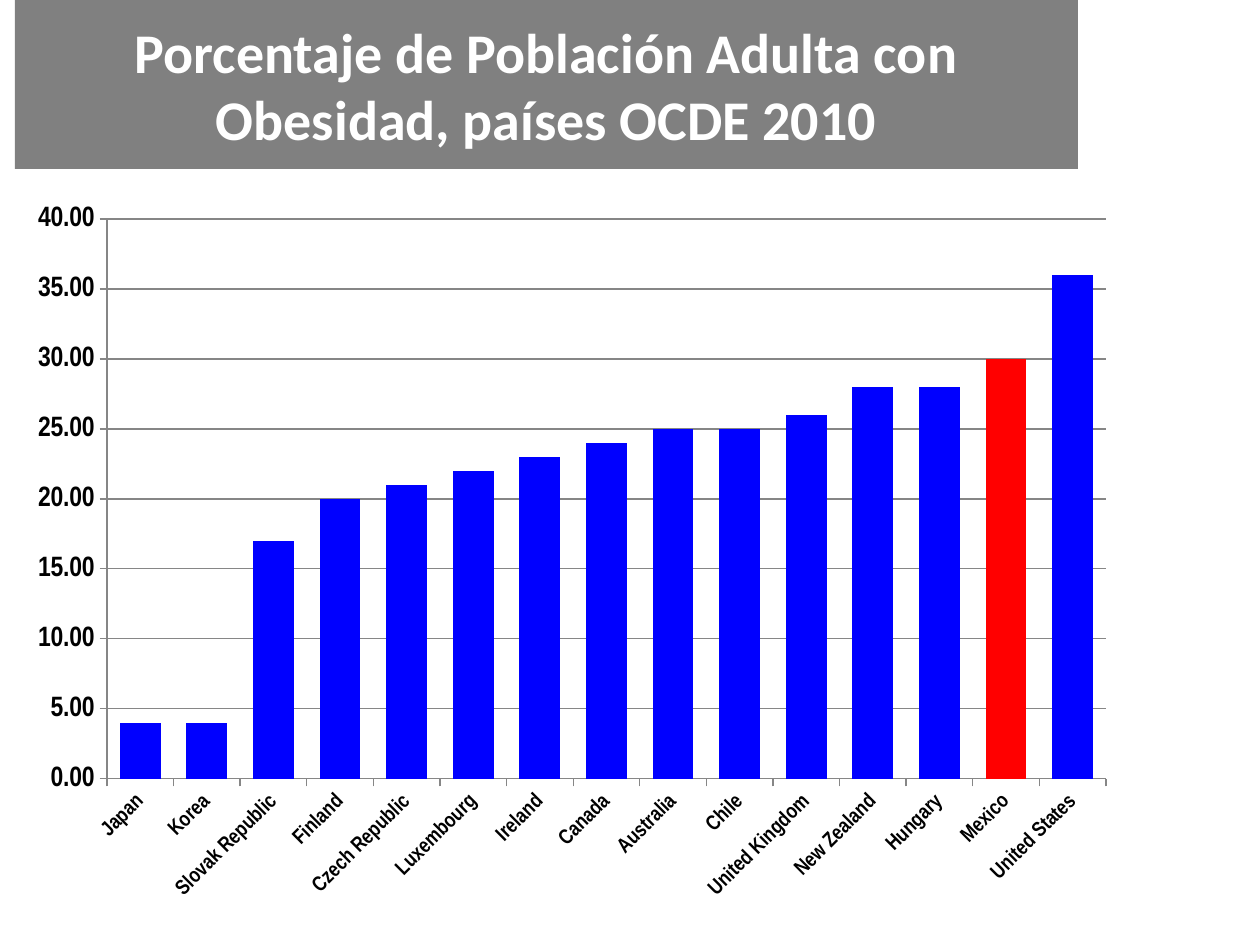
from lxml import etree
from pptx import Presentation
from pptx import util as u
from pptx.chart.data import CategoryChartData
from pptx.dml.color import RGBColor
from pptx.enum import chart as c, text
from pptx.oxml.ns import qn

SCALE = u.Inches(1) // 126  # EMU in one px
GRAY = RGBColor(0x80, 0x80, 0x80)
AXIS_GRAY = RGBColor(0x86, 0x86, 0x86)
WHITE = RGBColor(0xFF, 0xFF, 0xFF)
BLACK = RGBColor(0, 0, 0)
BLUE = RGBColor(0, 0, 0xFF)
RED = RGBColor(0xFF, 0, 0)

OBESITY = {
    "Japan": 4, "Korea": 4, "Slovak Republic": 17, "Finland": 20,
    "Czech Republic": 21, "Luxembourg": 22, "Ireland": 23,
    "Canada": 24, "Australia": 25, "Chile": 25,
    "United Kingdom": 26, "New Zealand": 28, "Hungary": 28,
    "Mexico": 30, "United States": 36,
}


class SlideBuilder:
    title_font = "Calibri"
    axis_font = "Arial Narrow"

    def __init__(self, slide):
        self.slide = slide

    def box(self, *lengths):
        return [length * SCALE for length in lengths]

    def style_font(self, font, name, size, color, bold=True):
        font.name, font.size, font.bold = name, u.Pt(size), bold
        font.color.rgb = color

    def style_line(self, line):
        line.color.rgb = AXIS_GRAY
        line.width = u.Pt(0.75)

    def title(self, wording, left, top, width, height):
        shape = self.slide.shapes.title
        shape.left, shape.top, shape.width, shape.height = self.box(
            left, top, width, height)
        shape.fill.solid()
        shape.fill.fore_color.rgb = GRAY
        frame = shape.text_frame
        frame.text = wording
        frame.word_wrap = True
        frame.auto_size = text.MSO_AUTO_SIZE.NONE
        frame.vertical_anchor = text.MSO_ANCHOR.MIDDLE
        paragraph = frame.paragraphs[0]
        paragraph.alignment = text.PP_ALIGN.CENTER
        self.style_font(paragraph.runs[0].font, self.title_font, 32, WHITE)

    def style_axis(self, axis, size):
        axis.major_tick_mark = c.XL_TICK_MARK.OUTSIDE
        axis.minor_tick_mark = c.XL_TICK_MARK.NONE
        self.style_line(axis.format.line)
        self.style_font(axis.tick_labels.font, self.axis_font, size, BLACK)

    def place_plot(self, chart, chart_box, plot_box):
        """Fix the inner plot area, both boxes in px on the slide."""
        left, top, width, height = chart_box
        plot_left, plot_top, plot_width, plot_height = plot_box
        plot_area = chart.element.find(".//" + qn("c:plotArea"))
        layout = plot_area.find(qn("c:layout"))
        if layout is None:
            layout = etree.Element(qn("c:layout"))
            plot_area.insert(0, layout)
        manual = etree.SubElement(layout, qn("c:manualLayout"))
        settings = {
            "layoutTarget": "inner", "xMode": "edge", "yMode": "edge",
            "x": (plot_left - left) / width, "y": (plot_top - top) / height,
            "w": plot_width / width, "h": plot_height / height,
        }
        for tag, value in settings.items():
            etree.SubElement(manual, qn("c:" + tag)).set("val", str(value))

    def column_chart(self, values, highlight, chart_box, plot_box):
        data = CategoryChartData(number_format="0.00")
        data.categories = list(values)
        data.add_series("Series 1", list(values.values()))
        chart = self.slide.shapes.add_chart(
            c.XL_CHART_TYPE.COLUMN_CLUSTERED, *self.box(*chart_box),
            data).chart
        chart.has_legend = False
        chart.has_title = False
        self.style_font(chart.font, self.title_font, 18, BLACK, bold=False)
        self.place_plot(chart, chart_box, plot_box)

        # Columns, one of them highlighted
        plot = chart.plots[0]
        plot.gap_width = 63
        plot.vary_by_categories = False
        series = plot.series[0]
        series.invert_if_negative = False
        point = series.points[list(values).index(highlight)]
        for item, color in ((series, BLUE), (point, RED)):
            item.format.fill.solid()
            item.format.fill.fore_color.rgb = color

        # Axes, with slanted country names
        self.style_axis(chart.category_axis, 12)
        body = chart.category_axis._element.find(".//" + qn("a:bodyPr"))
        body.set("rot", str(-45 * 60000))
        axis = chart.value_axis
        self.style_axis(axis, 16)
        axis.minimum_scale, axis.maximum_scale, axis.major_unit = 0, 40, 5
        axis.tick_labels.number_format = "0.00"
        axis.tick_labels.number_format_is_linked = False
        axis.has_major_gridlines = True
        self.style_line(axis.major_gridlines.format.line)


def main():
    presentation = Presentation()
    presentation.slide_width = u.Inches(10)
    presentation.slide_height = u.Inches(7.5)
    title_only = presentation.slide_layouts[5]
    builder = SlideBuilder(presentation.slides.add_slide(title_only))
    builder.title("Porcentaje de Población Adulta con Obesidad, "
                  "países OCDE 2010", 15, 0, 1063, 169)
    builder.column_chart(OBESITY, "Mexico",
                         chart_box=(19, 185, 1118, 725),
                         plot_box=(107, 219, 999, 560))
    presentation.save("out.pptx")


if __name__ == "__main__":
    main()
